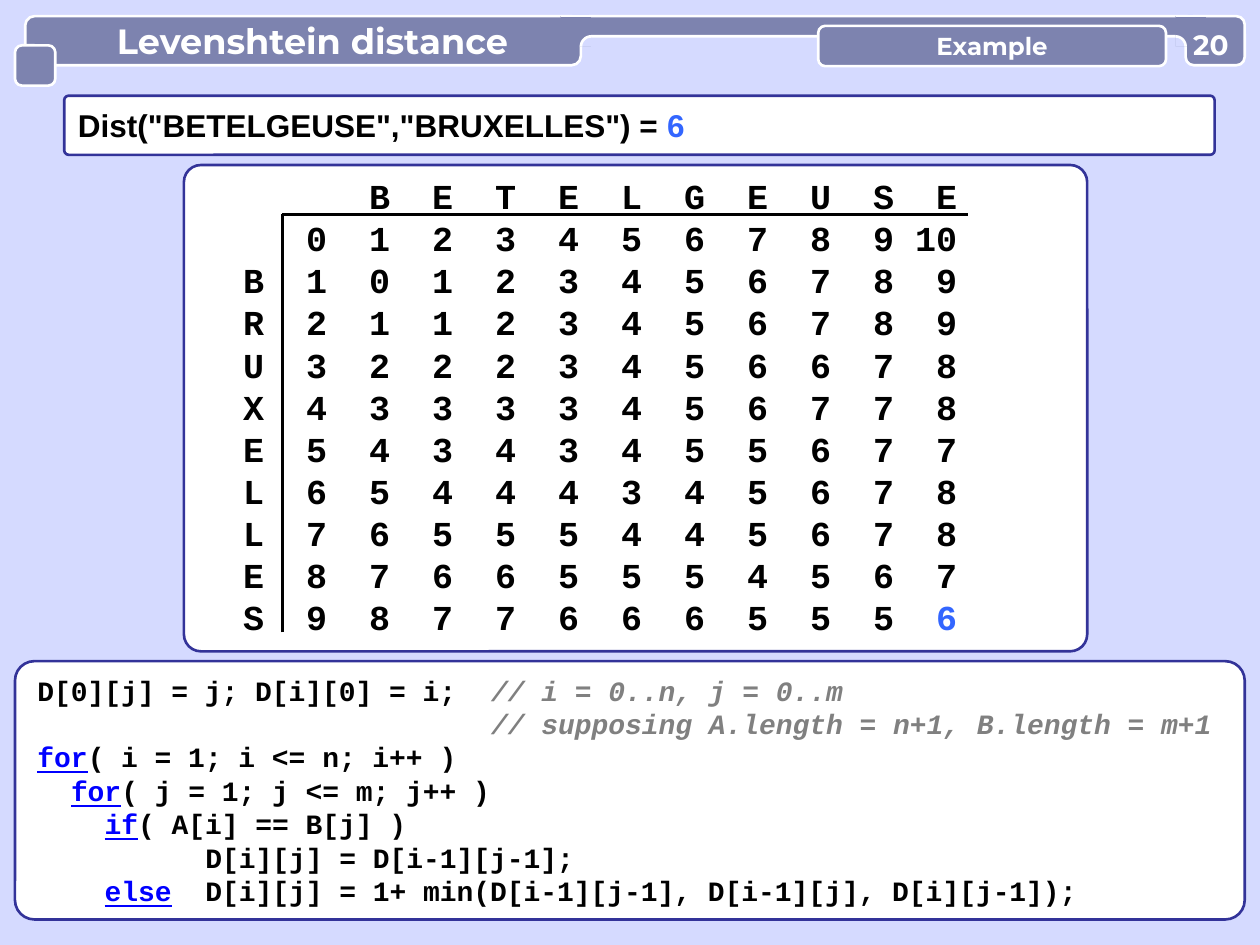
import math
from dataclasses import dataclass

from pptx import Presentation
from pptx import util as u
from pptx.dml import color
from pptx.enum import shapes, text
from pptx.oxml import ns
from lxml import etree


@dataclass(frozen=True)
class Theme:
    page: str = "D5DAFF"
    panel: str = "FFFFFF"
    frame: str = "333399"
    banner: str = "7D83AF"
    light: str = "FFFFFF"
    ink: str = "000000"
    result: str = "3366FF"
    keyword: str = "0000FF"
    comment: str = "808080"
    sans: str = "Arial"
    mono: str = "Courier New"
    heading: str = "Montserrat"
    title_size: int = 20
    label_size: int = 14
    number_size: int = 16
    claim_size: int = 18
    matrix_size: int = 20
    code_size: int = 16
    stroke: float = 1.5


THEME = Theme()
LEFT, CENTER = text.PP_ALIGN.LEFT, text.PP_ALIGN.CENTER


def rgb(value):
    return color.RGBColor.from_string(value)


def add_tabs(para, stops, align):
    tabs = etree.SubElement(para._p.get_or_add_pPr(), ns.qn("a:tabLst"))
    for stop in stops:
        etree.SubElement(tabs, ns.qn("a:tab"), pos=str(u.Pt(stop)), algn=align)


def write(box, lines, *, font, size, ink=THEME.ink, align=LEFT, wrap=True,
          margins=(7.2, 3.6, 7.2, 3.6), leading=None, stops=(), tab_align="l"):
    frame = box.text_frame
    frame.word_wrap = wrap
    frame.vertical_anchor = text.MSO_ANCHOR.MIDDLE
    (frame.margin_left, frame.margin_top,
     frame.margin_right, frame.margin_bottom) = map(u.Pt, margins)
    for index, line in enumerate(lines):
        para = frame.add_paragraph() if index else frame.paragraphs[0]
        para.alignment = align
        if leading:
            para.line_spacing = u.Pt(leading)
        if stops:
            add_tabs(para, stops, tab_align)
        for content, look in line:
            span = para.add_run()
            span.text = content
            span.font.name = font
            span.font.size = u.Pt(size)
            span.font.bold = True
            span.font.italic = look.get("italic", False)
            span.font.underline = look.get("underline", False)
            span.font.color.rgb = rgb(look.get("ink", ink))


class Painter:
    def __init__(self, page, theme):
        self.page = page
        self.theme = theme
        page.background.fill.solid()
        page.background.fill.fore_color.rgb = rgb(theme.page)

    def paint(self, shape, fill, line):
        shape.shadow.inherit = False
        if fill:
            shape.fill.solid()
            shape.fill.fore_color.rgb = rgb(fill)
        else:
            shape.fill.background()
        if line:
            shape.line.color.rgb = rgb(line)
            shape.line.width = u.Pt(self.theme.stroke)
        else:
            shape.line.fill.background()
        return shape

    def rounded(self, area, corner, fill, line):
        kind = shapes.MSO_SHAPE.ROUNDED_RECTANGLE
        shape = self.page.shapes.add_shape(kind, *map(u.Pt, area))
        shape.adjustments[0] = corner
        return self.paint(shape, fill, line)

    def panel(self, area, corner):
        return self.rounded(area, corner, self.theme.panel, self.theme.frame)

    def banner(self, area, corner=0.17):
        return self.rounded(area, corner, self.theme.banner, self.theme.light)

    def square(self, left, top, side):
        kind = shapes.MSO_SHAPE.RECTANGLE
        shape = self.page.shapes.add_shape(kind, *map(u.Pt, (left, top, side, side)))
        return self.paint(shape, self.theme.banner, None)

    def line(self, start, end, ink):
        line = self.page.shapes.add_connector(
            shapes.MSO_CONNECTOR.STRAIGHT, *map(u.Pt, (*start, *end)))
        line.line.color.rgb = rgb(ink)
        line.line.width = u.Pt(self.theme.stroke)
        etree.SubElement(line._element.spPr, ns.qn("a:effectLst"))

    def outline(self, points, fill, line, close):
        points = [(u.Pt(x), u.Pt(y)) for x, y in points]
        builder = self.page.shapes.build_freeform(*points[0])
        builder.add_line_segments(points[1:], close=close)
        self.paint(builder.convert_to_shape(), fill, line)

    def notch(self, left, top, center, radius, side):
        size = 17.3
        self.square(left, top, size)
        self.line((left, top), (left + size, top), self.theme.light)
        angles = [math.radians(step * 7.5) for step in range(13)]
        arc = [(center[0] + side * radius * math.sin(angle),
                center[1] - radius * math.cos(angle)) for angle in angles]
        self.outline(arc + [center], self.theme.page, None, True)
        self.outline(arc, None, self.theme.light, False)

    def label(self, area):
        return self.page.shapes.add_textbox(*map(u.Pt, area))


def edit_distances(across, down):
    table = [list(range(len(across) + 1))]
    for i, letter in enumerate(down, 1):
        row = [i]
        for j, other in enumerate(across, 1):
            above = table[-1]
            row.append(above[j - 1] if letter == other
                       else 1 + min(above[j - 1], above[j], row[-1]))
        table.append(row)
    return table


def matrix_lines(across, down, table, result):
    rows = [["", "", *across]]
    rows += [[letter, *values] for letter, values in zip(["", *down], table)]
    lines = [[("".join(f"\t{cell}" for cell in row), {})] for row in rows]
    last = lines[-1][0][0]
    digits = len(str(table[-1][-1]))
    lines[-1] = [(last[:-digits], {}), (last[-digits:], result)]
    return lines


def main():
    deck = Presentation()
    deck.slide_width, deck.slide_height = u.Pt(720), u.Pt(540)
    painter = Painter(deck.slides.add_slide(deck.slide_layouts[6]), THEME)
    across, down = "BETELGEUSE", "BRUXELLES"
    table = edit_distances(across, down)
    result = {"ink": THEME.result}
    keyword = {"ink": THEME.keyword, "underline": True}
    comment = {"ink": THEME.comment, "italic": True}

    claim = painter.panel((36.7, 54.7, 657.4, 33.8), 0.075)
    write(claim, [[(f'Dist("{across}","{down}") = ', {}), (str(table[-1][-1]), result)]],
          font=THEME.sans, size=THEME.claim_size)

    matrix = painter.panel((105.1, 94.3, 516.2, 277.9), 0.035)
    write(matrix, matrix_lines(across, down, table, result),
          font=THEME.mono, size=THEME.matrix_size, leading=24, margins=(7.2, 3.6, 7.2, 6),
          stops=[36 * (column + 1) for column in range(len(across) + 2)], tab_align="r")
    corner = (161.3, 122.4)
    painter.line(corner, (553, 122.4), THEME.ink)
    painter.line((161.3, 361.4), corner, THEME.ink)

    banner_text = {"font": THEME.heading, "ink": THEME.light, "align": CENTER}
    title = painter.banner((14.4, 9.2, 317.5, 28.1), 0.188)
    write(title, [[("Levenshtein distance", {})]], size=THEME.title_size,
          margins=(18, 3.6, 7.2, 3.6), **banner_text)
    painter.banner((331.9, 9.2, 351.4, 11.5), 0.5)
    painter.notch(320.4, 9.2, (337.8, 26.6), 5.8, -1)
    painter.banner((8.6, 25.9, 23, 23))
    painter.banner((677.5, 9.2, 33.8, 28.1))
    painter.notch(671.8, 9.2, (671.7, 26.6), 5.8, 1)
    topic = painter.banner((467.6, 14.8, 198.7, 23))
    write(topic, [[("Example", {})]], size=THEME.label_size, **banner_text)
    number = painter.label((677.5, 15.8, 28.8, 19.4))
    write(number, [[("20", {})]], size=THEME.number_size, wrap=False,
          margins=(0, 0, 0, 0), **banner_text)

    code = painter.panel((8.6, 377.8, 702.7, 147.6), 0.075)
    code_lines = [
        [("D[0][j] = j; D[i][0] = i;\t", {}), ("// i = 0..n, j = 0..m", comment)],
        [("\t\t\t\t", {}), ("// supposing A.length = n+1, B.length = m+1", comment)],
        [("for", keyword), ("( i = 1; i <= n; i++ )", {})],
        [("\t", {}), ("for", keyword), ("( j = 1; j <= m; j++ )", {})],
        [("\t\t", {}), ("if", keyword), ("( A[i] == B[j] )", {})],
        [("\t\t\tD[i][j] = D[i-1][j-1];", {})],
        [("\t\t", {}), ("else", keyword),
         ("\tD[i][j] = 1+ min(D[i-1][j-1], D[i-1][j], D[i][j-1]);", {})],
    ]
    write(code, code_lines, font=THEME.mono, size=THEME.code_size, leading=19.1,
          margins=(9.6, 0, 0, 0), stops=[9.6 * column for column in (2, 4, 10, 27)])
    deck.save("out.pptx")


if __name__ == "__main__":
    main()
